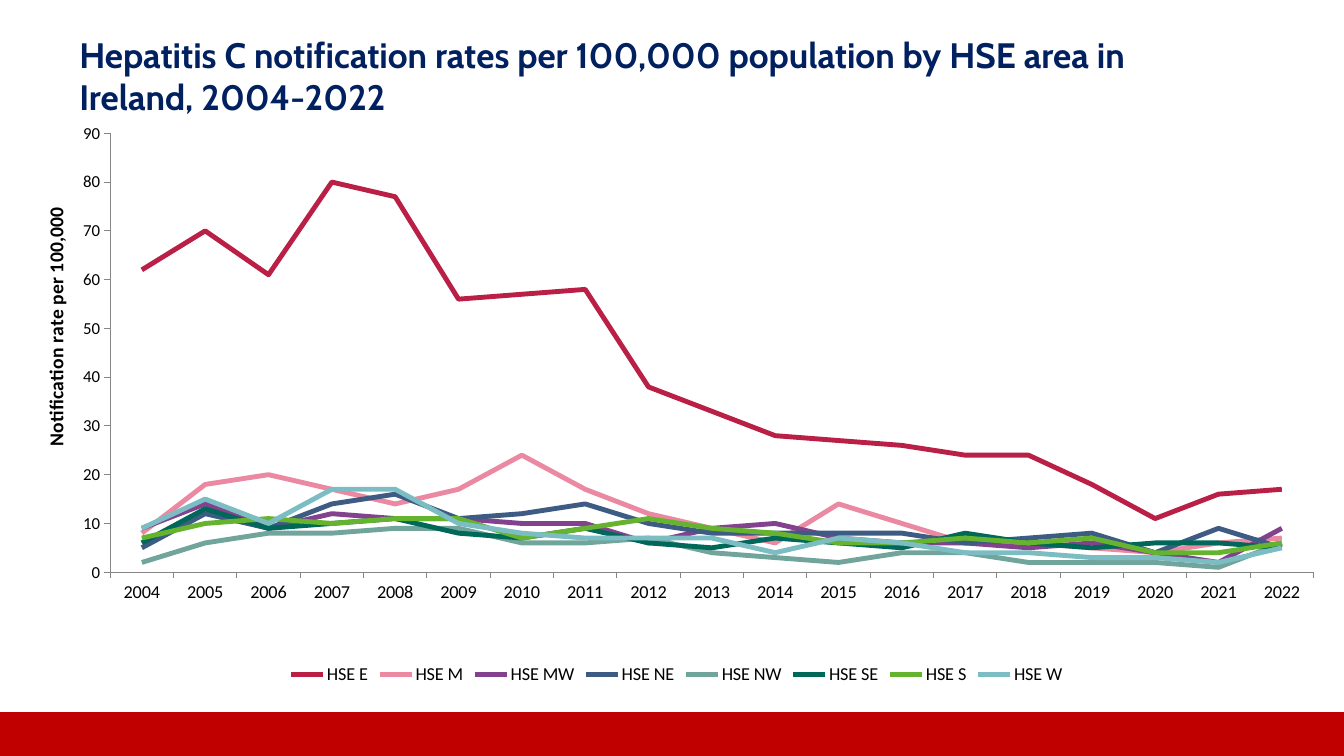
from lxml import etree
from pptx import Presentation
from pptx.chart.data import CategoryChartData
from pptx.dml.color import RGBColor
from pptx.enum.chart import XL_CHART_TYPE, XL_LEGEND_POSITION, XL_MARKER_STYLE, XL_TICK_MARK
from pptx.enum.shapes import MSO_SHAPE
from pptx.enum.text import MSO_ANCHOR
from pptx.oxml.ns import qn
from pptx.util import Inches, Pt

LINE = XL_CHART_TYPE.LINE
BOTTOM = XL_LEGEND_POSITION.BOTTOM
NO_MARKER = XL_MARKER_STYLE.NONE
TICK_OUT = XL_TICK_MARK.OUTSIDE
NO_TICK = XL_TICK_MARK.NONE
RECTANGLE = MSO_SHAPE.RECTANGLE
MIDDLE = MSO_ANCHOR.MIDDLE

WIDTH, HEIGHT = Inches(13.33), Inches(7.5)
COLORS = {
    "footer": "C00000", "title": "002060", "text": "000000", "axis": "868686",
    "HSE E": "BA1F46", "HSE M": "EB89A3", "HSE MW": "82428D", "HSE NE": "3E5B84",
    "HSE NW": "71A59C", "HSE SE": "006858", "HSE S": "65B32E", "HSE W": "7CBDC4",
}
YEARS = [str(year) for year in range(2004, 2023)]
RATES = {
    "HSE E": [62, 70, 61, 80, 77, 56, 57, 58, 38, 33, 28, 27, 26, 24, 24, 18, 11, 16, 17],
    "HSE M": [8, 18, 20, 17, 14, 17, 24, 17, 12, 9, 6, 14, 10, 6, 6, 5, 4, 6, 7],
    "HSE MW": [9, 14, 9, 12, 11, 11, 10, 10, 6, 9, 10, 7, 6, 6, 5, 6, 4, 2, 9],
    "HSE NE": [5, 12, 9, 14, 16, 11, 12, 14, 10, 8, 8, 8, 8, 6, 7, 8, 4, 9, 5],
    "HSE NW": [2, 6, 8, 8, 9, 9, 6, 6, 7, 4, 3, 2, 4, 4, 2, 2, 2, 1, 6],
    "HSE SE": [6, 13, 9, 10, 11, 8, 7, 9, 6, 5, 7, 6, 5, 8, 6, 5, 6, 6, 5],
    "HSE S": [7, 10, 11, 10, 11, 11, 7, 9, 11, 9, 8, 6, 6, 7, 6, 7, 4, 4, 6],
    "HSE W": [9, 15, 10, 17, 17, 10, 8, 7, 7, 7, 4, 7, 6, 4, 4, 3, 3, 2, 5],
}


def color(key):
    return RGBColor.from_string(COLORS[key])


def share(left, top, width, height):
    return int(left * WIDTH), int(top * HEIGHT), int(width * WIDTH), int(height * HEIGHT)


def style_font(font, size, key="text", name="Calibri", bold=False):
    font.size, font.name, font.bold = Pt(size), name, bold
    font.color.rgb = color(key)


def add_footer(slide):
    footer = slide.shapes.add_shape(RECTANGLE, *share(0, 0.944, 1, 0.056))
    footer.shadow.inherit = False
    footer.fill.solid()
    footer.fill.fore_color.rgb = color("footer")
    footer.line.color.rgb = color("footer")
    footer.line.width = Pt(2)


def add_title(slide, wording):
    frame = slide.shapes.add_textbox(*share(0.05, 0.044, 0.82, 0.111)).text_frame
    frame.word_wrap = True
    frame.vertical_anchor = MIDDLE
    frame.margin_left = frame.margin_right = Inches(0.12)
    frame.margin_top = frame.margin_bottom = Inches(0.06)
    run = frame.paragraphs[0].add_run()
    run.text = wording
    style_font(run.font, 25.2, "title", "Cabin", True)


def place(parent, index, settings):
    for old in parent.findall(qn("c:layout")):
        parent.remove(old)
    layout = etree.Element(qn("c:layout"))
    manual = etree.SubElement(layout, qn("c:manualLayout"))
    for tag, value in settings.items():
        etree.SubElement(manual, qn(f"c:{tag}")).set("val", str(value))
    parent.insert(index, layout)


def style_axis(axis, size):
    axis.has_major_gridlines = False
    axis.major_tick_mark = TICK_OUT
    axis.minor_tick_mark = NO_TICK
    axis.format.line.color.rgb = color("axis")
    axis.format.line.width = Pt(0.75)
    style_font(axis.tick_labels.font, size)


def add_axis_title(chart, wording):
    frame = chart.value_axis.axis_title.text_frame
    run = frame.paragraphs[0].add_run()
    run.text = wording
    style_font(run.font, 14, bold=True)
    title = chart.element.find(".//" + qn("c:valAx")).find(qn("c:title")) if hasattr(chart, "element") \
        else chart._chartSpace.find(".//" + qn("c:valAx")).find(qn("c:title"))
    body = title.find(".//" + qn("a:bodyPr"))
    body.set("rot", "-5400000")
    body.set("vert", "horz")
    place(title, 1, {"xMode": "edge", "yMode": "edge", "x": 0.01, "y": 0.15})


def add_rates_chart(slide):
    data = CategoryChartData()
    data.categories = YEARS
    for area, rates in RATES.items():
        data.add_series(area, rates)
    chart = slide.shapes.add_chart(LINE, *share(0.019, 0.156, 0.969, 0.756), data).chart
    chart.has_title = False
    style_font(chart.font, 10)
    chart.has_legend = True
    chart.legend.position = BOTTOM
    chart.legend.include_in_layout = False
    style_font(chart.legend.font, 13)

    style_axis(chart.category_axis, 13)
    style_axis(chart.value_axis, 12)
    chart.value_axis.minimum_scale = 0
    chart.value_axis.maximum_scale = 90
    chart.value_axis.major_unit = 10
    add_axis_title(chart, "Notification rate per 100,000")

    plot = chart.plots[0]
    plot.vary_by_categories = False
    for area_line in plot.series:
        area_line.smooth = False
        area_line.marker.style = NO_MARKER
        area_line.format.line.color.rgb = color(area_line.name)
        area_line.format.line.width = Pt(3.5)
    plot_area = chart._chartSpace.find(".//" + qn("c:plotArea"))
    place(plot_area, 0, {"layoutTarget": "inner", "xMode": "edge", "yMode": "edge",
                         "x": 0.065, "y": 0.027, "w": 0.924, "h": 0.768})


def main():
    deck = Presentation()
    deck.slide_width, deck.slide_height = WIDTH, HEIGHT
    slide = deck.slides.add_slide(deck.slide_layouts[6])
    add_footer(slide)
    add_title(slide, "Hepatitis C notification rates per 100,000 population by HSE area in Ireland, 2004-2022")
    add_rates_chart(slide)
    deck.save("out.pptx")


if __name__ == "__main__":
    main()
